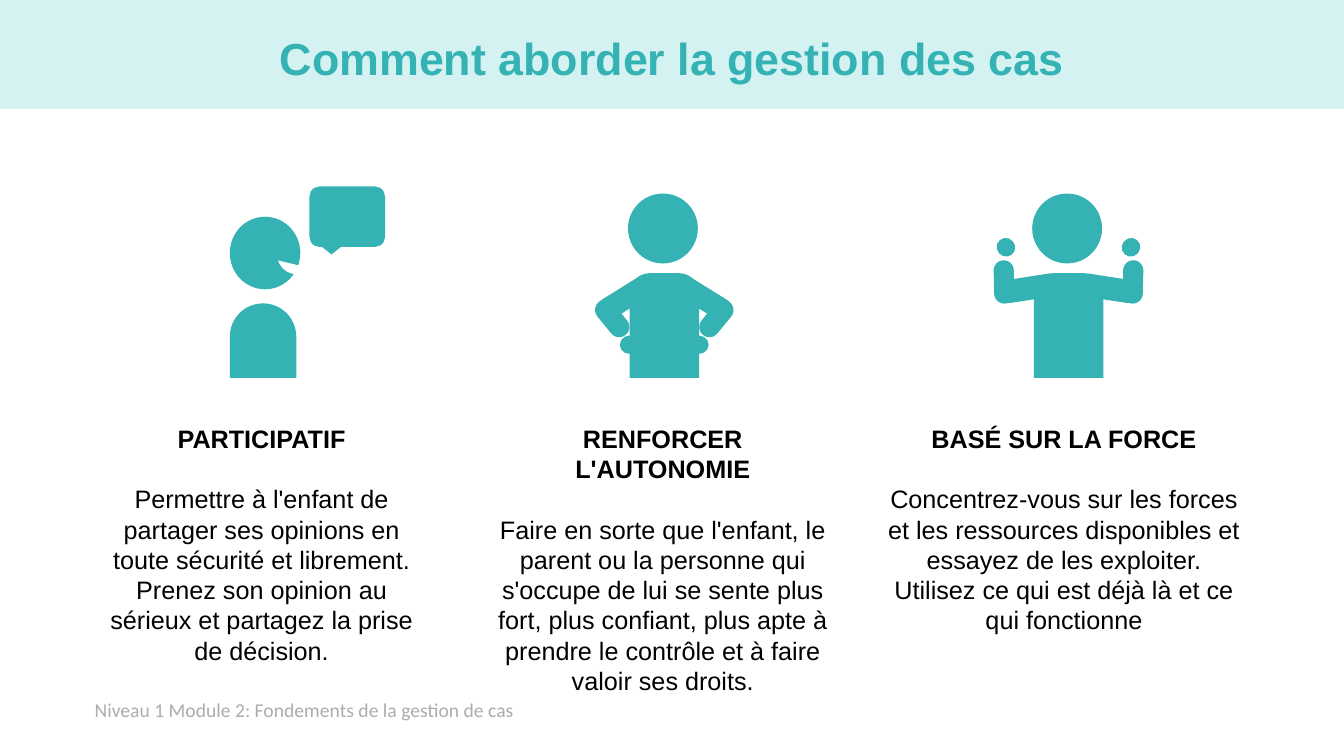
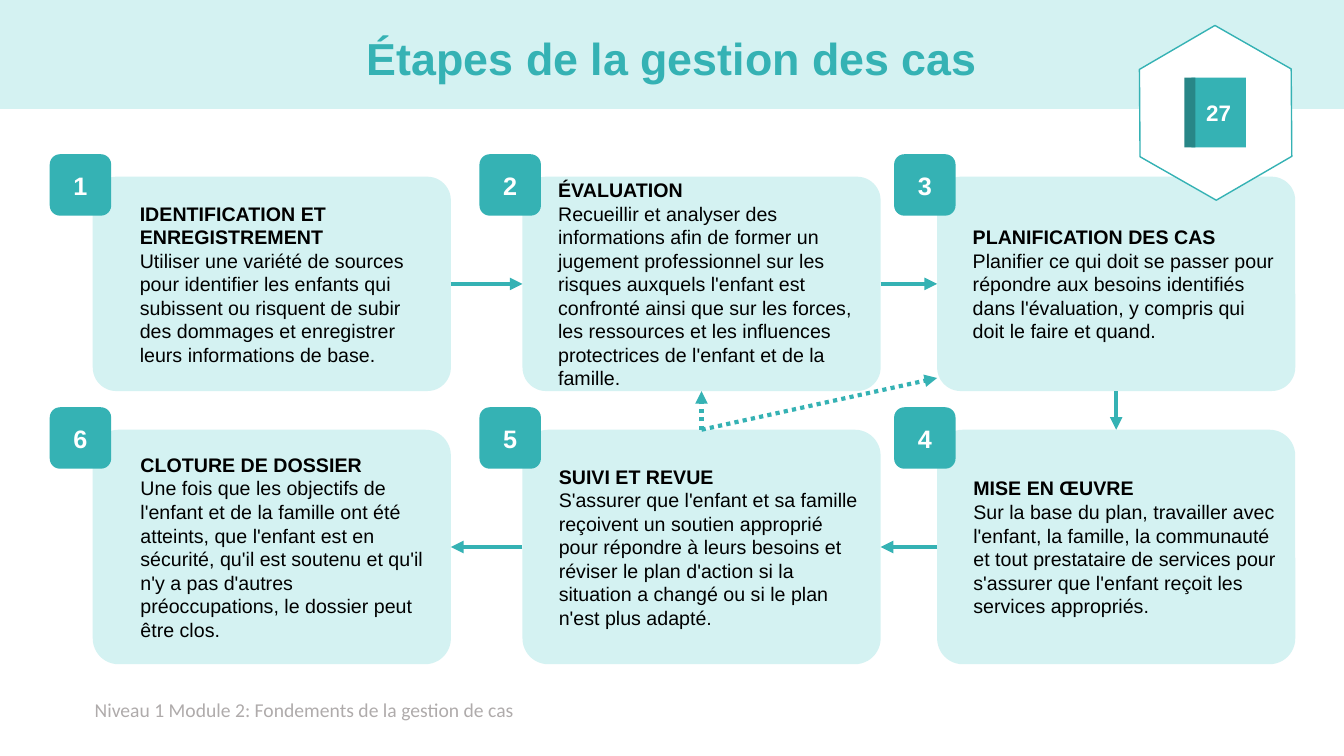
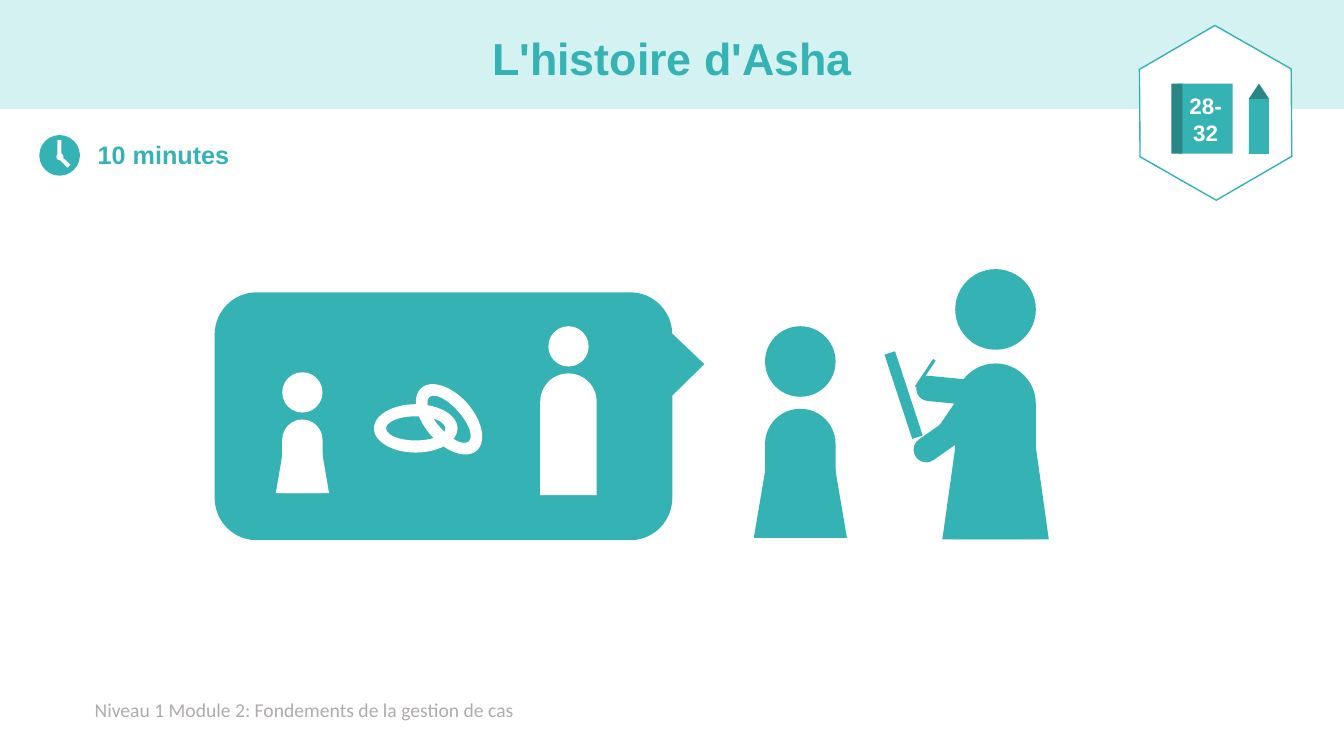
from dataclasses import dataclass
from lxml.etree import SubElement
from pptx import Presentation
from pptx.dml.color import RGBColor
from pptx.enum.dml import MSO_LINE_DASH_STYLE as Dash
from pptx.enum.shapes import MSO_CONNECTOR, MSO_SHAPE as Kind
from pptx.enum.text import MSO_ANCHOR as Anchor, PP_ALIGN as Align
from pptx.oxml.ns import qn
from pptx.util import Emu, Pt

COLUMNS, ROWS = 40, 22.5
CELL = 304800
TOP, LEFT, BOTTOM, RIGHT = range(4)


@dataclass(frozen=True)
class Theme:
    teal: str = "35B2B4"
    dark: str = "288687"
    pale: str = "D4F2F2"
    white: str = "FFFFFF"
    black: str = "000000"
    grey: str = "AFABAB"
    font: str = "Arial"
    footer_font: str = "Calibri"
    title_size: float = 32
    large: float = 18
    page_number: float = 16
    small: float = 14
    blank_line: float = 21.6


THEME = Theme()
FOOTER = "Niveau 1 Module 2: Fondements de la gestion de cas"


def cells(*counts):
    return [Emu(round(count * CELL)) for count in counts]


class Painter:
    def __init__(self, theme):
        self.theme = theme
        self.deck = Presentation()
        self.deck.slide_width, self.deck.slide_height = cells(COLUMNS, ROWS)
        self.page = None

    def new_page(self, title):
        theme = self.theme
        self.page = self.deck.slides.add_slide(self.deck.slide_layouts[6])
        self.shape(Kind.RECTANGLE, 0, 0, COLUMNS, 3.24, theme.pale)
        self.text([FOOTER], 2.52, 20.61, 13.65, 1.02, theme.small, theme.grey,
                  font=theme.footer_font)
        box = self.text([title], 2.76, 0.39, 34.5, 2.85, theme.title_size,
                        theme.teal, bold=(True,), align=Align.CENTER,
                        anchor=Anchor.MIDDLE)
        box.text_frame.paragraphs[0].line_spacing = 0.9

    def fill_text(self, box, lines, size, color, bold=(False,), align=Align.LEFT,
                  anchor=Anchor.TOP, font=None, indent=0):
        frame = box.text_frame
        frame.word_wrap = True
        frame.vertical_anchor = anchor
        frame.text = "\n".join(lines)
        for para, heavy in zip(frame.paragraphs, bold):
            para.alignment = align
            if indent:
                para._p.get_or_add_pPr().set("marL", str(cells(indent)[0]))
            for span in para.runs:
                span.font.name = font or self.theme.font
                span.font.size = Pt(size)
                span.font.bold = heavy
                span.font.color.rgb = RGBColor.from_string(color)
        return box

    def text(self, lines, x, y, width, height, size, color, **style):
        box = self.page.shapes.add_textbox(*cells(x, y, width, height))
        return self.fill_text(box, lines, size, color, **style)

    def shape(self, kind, x, y, width, height, fill, turn=0, adjust=(), line=None):
        shape = self.page.shapes.add_shape(kind, *cells(x, y, width, height))
        shape.shadow.inherit = False
        shape.rotation = turn
        shape.fill.solid()
        shape.fill.fore_color.rgb = RGBColor.from_string(fill)
        for index, value in enumerate(adjust):
            shape.adjustments[index] = value
        if line:
            shape.line.color.rgb = RGBColor.from_string(line)
            shape.line.width = Pt(1)
        else:
            shape.line.fill.background()
        return shape

    def label(self, box, words, size):
        self.fill_text(box, [words], size, self.theme.white, bold=(True,),
                       align=Align.CENTER, anchor=Anchor.MIDDLE)

    def line(self, start=(0, 0), end=(0, 0), weight=3, dotted=False, arrow=True,
             source=None, target=None):
        link = self.page.shapes.add_connector(
            MSO_CONNECTOR.STRAIGHT, *cells(*start, *end))
        if source:
            link.begin_connect(*source)
        if target:
            link.end_connect(*target)
        link.line.color.rgb = RGBColor.from_string(self.theme.teal)
        link.line.width = Pt(weight)
        if dotted:
            link.line.dash_style = Dash.ROUND_DOT
        if arrow:
            SubElement(link.line._get_or_add_ln(), qn("a:tailEnd"), type="triangle")
        SubElement(link._element.spPr, qn("a:effectLst"))

    def principle(self, x, width, heading, body):
        box = self.text([heading, body], x, 12.45, width, 5.76, self.theme.large,
                        self.theme.black, bold=(True, False), align=Align.CENTER)
        box.text_frame.paragraphs[0].space_after = Pt(self.theme.blank_line)

    def card(self, number, x, y, height, indent, heading, body):
        theme = self.theme
        box = self.shape(Kind.ROUNDED_RECTANGLE, x, y, 10.66, height, theme.pale,
                         adjust=(0.11,))
        self.fill_text(box, [heading, body], theme.small, theme.black,
                       bold=(True, False), anchor=Anchor.MIDDLE, indent=indent)
        badge = self.shape(Kind.ROUNDED_RECTANGLE, x - 1.28, y - 0.67, 1.83, 1.83,
                           theme.teal)
        self.label(badge, str(number), theme.large)
        return box

    def handbook(self, pages, x, y):
        theme = self.theme
        self.shape(Kind.HEXAGON, 33.57, 1.11, 5.22, 4.5, theme.white, turn=29.7,
                   adjust=(0.29,), line=theme.teal)
        cover = self.shape(Kind.RECTANGLE, x + 0.21, y, 1.62, 2.08, theme.teal)
        self.label(cover, pages, theme.page_number)
        self.shape(Kind.RECTANGLE, x, y, 0.33, 2.08, theme.dark)

    def strong_person(self, axis, limbs):
        teal = self.theme.teal
        self.shape(Kind.OVAL, axis - 1.08, 5.76, 2.08, 2.08, teal)
        self.shape(Kind.ROUND_2_SAME_RECTANGLE, axis - 1.03, 8.13, 2.07, 3.12, teal,
                   adjust=(0.29, 0))
        for reach, middle, width, height, turn in limbs:
            for side in (1, -1):
                self.shape(Kind.ROUND_2_SAME_RECTANGLE,
                           axis + side * reach - width / 2, middle - height / 2,
                           width, height, teal, turn=side * turn % 360,
                           adjust=(0.5, 0.5))

    def figure(self, x, y, head, color, body=1.83, skirt=0, girth=1):
        self.shape(Kind.OVAL, x, y, head, head, color)
        self.shape(Kind.ROUND_2_SAME_RECTANGLE, x + head * (1 - girth) / 2,
                   y + 1.17 * head, head * girth, head * body, color, adjust=(0.5, 0))
        if skirt:
            self.shape(Kind.FLOWCHART_MANUAL_OPERATION, x - 0.16 * head,
                       y + head * (1.17 + body - skirt), 1.32 * head, head * skirt,
                       color, turn=180)


def approach_page(painter):
    theme = painter.theme
    painter.new_page("Comment aborder la gestion des cas")
    for principle in (
        (26.04, 11.25, "BASÉ SUR LA FORCE",
         "Concentrez-vous sur les forces et les ressources disponibles et essayez "
         "de les exploiter. Utilisez ce qui est déjà là et ce qui fonctionne"),
        (14.4, 10.65, "RENFORCER L'AUTONOMIE",
         "Faire en sorte que l'enfant, le parent ou la personne qui s'occupe de lui "
         "se sente plus fort, plus confiant, plus apte à prendre le contrôle et à "
         "faire valoir ses droits."),
        (2.76, 10.05, "PARTICIPATIF",
         "Permettre à l'enfant de partager ses opinions en toute sécurité et "
         "librement. Prenez son opinion au sérieux et partagez la prise de décision."),
    ):
        painter.principle(*principle)
    painter.shape(Kind.OVAL, 6.84, 6.45, 2.1, 2.16, theme.teal)
    painter.shape(Kind.ROUND_2_SAME_RECTANGLE, 6.84, 9.03, 1.98, 2.22, theme.teal,
                  adjust=(0.5, 0))
    painter.shape(Kind.CHORD, 8.25, 6.99, 1.14, 1.17, theme.white,
                  adjust=(27, 97.34))
    painter.shape(Kind.ROUNDED_RECTANGULAR_CALLOUT, 9.21, 5.55, 2.25, 1.8, theme.teal)
    painter.strong_person(19.77, (
        (1.12, 8.85, 0.66, 1.98, 301.9),
        (1.55, 9.48, 0.61, 1.26, 219.3),
        (1.05, 10.26, 0.54, 0.54, 0),
    ))
    painter.strong_person(31.8, (
        (1.17, 8.58, 0.69, 1.93, 98.8),
        (1.92, 8.39, 0.6, 1.29, 181.3),
        (1.86, 7.36, 0.54, 0.56, 40.6),
    ))


def steps_page(painter):
    painter.new_page("Étapes de la gestion des cas")
    columns = ((2.76, 0.9), (15.55, 0.56), (27.89, 0.56))
    rows = ((5.26, 6.38), (12.79, 6.98))
    steps = (
        (1, 0, 0, "IDENTIFICATION ET ENREGISTREMENT",
         "Utiliser une variété de sources pour identifier les enfants qui subissent "
         "ou risquent de subir des dommages et enregistrer leurs informations de "
         "base."),
        (2, 1, 0, "ÉVALUATION",
         "Recueillir et analyser des informations afin de former un jugement "
         "professionnel sur les risques auxquels l'enfant est confronté ainsi que "
         "sur les forces, les ressources et les influences protectrices de l'enfant "
         "et de la famille."),
        (3, 2, 0, "PLANIFICATION DES CAS",
         "Planifier ce qui doit se passer pour répondre aux besoins identifiés dans "
         "l'évaluation, y compris qui doit le faire et quand."),
        (4, 2, 1, "MISE EN ŒUVRE",
         "Sur la base du plan, travailler avec l'enfant, la famille, la communauté "
         "et tout prestataire de services pour s'assurer que l'enfant reçoit les "
         "services appropriés."),
        (5, 1, 1, "SUIVI ET REVUE",
         "S'assurer que l'enfant et sa famille reçoivent un soutien approprié pour "
         "répondre à leurs besoins et réviser le plan d'action si la situation a "
         "changé ou si le plan n'est plus adapté."),
        (6, 0, 1, "CLOTURE DE DOSSIER",
         "Une fois que les objectifs de l'enfant et de la famille ont été atteints, "
         "que l'enfant est en sécurité, qu'il est soutenu et qu'il n'y a pas "
         "d'autres préoccupations, le dossier peut être clos."),
    )
    cards = {}
    for number, column, row, heading, body in steps:
        x, indent = columns[column]
        cards[number] = painter.card(number, x, *rows[row], indent, heading, body)
    painter.handbook("27", 35.25, 2.31)
    for start, leave, end, arrive, dotted in (
        (1, RIGHT, 2, LEFT, False),
        (2, RIGHT, 3, LEFT, False),
        (3, BOTTOM, 4, TOP, False),
        (4, LEFT, 5, RIGHT, False),
        (5, LEFT, 6, RIGHT, False),
        (5, TOP, 2, BOTTOM, True),
    ):
        painter.line(source=(cards[start], leave), target=(cards[end], arrive),
                     dotted=dotted)
    painter.line(end=(27.89, 11.25), source=(cards[5], TOP), dotted=True)


def story_page(painter):
    theme = painter.theme
    teal, white = theme.teal, theme.white
    painter.new_page("L'histoire d'Asha")
    painter.handbook("28-32", 34.86, 2.49)
    painter.shape(Kind.ISOSCELES_TRIANGLE, 37.17, 2.49, 0.6, 0.45, theme.dark)
    painter.shape(Kind.RECTANGLE, 37.17, 2.94, 0.6, 1.64, teal)

    painter.text(["10 minutes"], 2.61, 3.99, 5.13, 1.2, theme.large, teal,
                 bold=(True,))
    painter.shape(Kind.OVAL, 1.17, 4.02, 1.21, 1.21, teal)
    painter.shape(Kind.OVAL, 1.68, 4.56, 0.21, 0.21, white)
    painter.shape(Kind.RECTANGLE, 1.53, 4.35, 0.48, 0.12, white, turn=270)
    painter.shape(Kind.RECTANGLE, 1.77, 4.77, 0.33, 0.12, white, turn=224.2)

    painter.shape(Kind.ROUNDED_RECTANGULAR_CALLOUT, 6.39, 8.7, 13.62, 7.38, teal,
                  adjust=(0.57, -0.21, 0.17))
    painter.figure(22.77, 9.71, 2.1, teal, skirt=1.56)
    painter.figure(8.4, 11.08, 1.2, white, skirt=1.56)
    painter.figure(16.32, 9.71, 1.2, white, body=3.02, girth=1.4)
    for x, y, turn in ((11.13, 12.03, 0), (12.12, 11.76, 48.4)):
        painter.shape(Kind.DONUT, x, y, 2.49, 1.44, white, turn=turn)

    for x, y, height, turn in (
        (28.17, 11.55, 1.83, 214.3),
        (27.39, 12.63, 1.23, 235),
        (27.93, 10.59, 2.07, 275.6),
    ):
        painter.shape(Kind.ROUND_2_SAME_RECTANGLE, x, y, 0.75, height, teal,
                      turn=turn, adjust=(0.49, 0))
    painter.shape(Kind.RECTANGLE, 26.73, 10.44, 0.33, 2.64, teal, turn=341.8)
    painter.line((27.81, 10.71), (27.27, 11.52), weight=2.25, arrow=False)
    painter.figure(28.43, 8.01, 2.4, teal, body=2.18, skirt=1.88)


def main():
    painter = Painter(THEME)
    for build in (approach_page, steps_page, story_page):
        build(painter)
    painter.deck.save("out.pptx")


if __name__ == "__main__":
    main()
